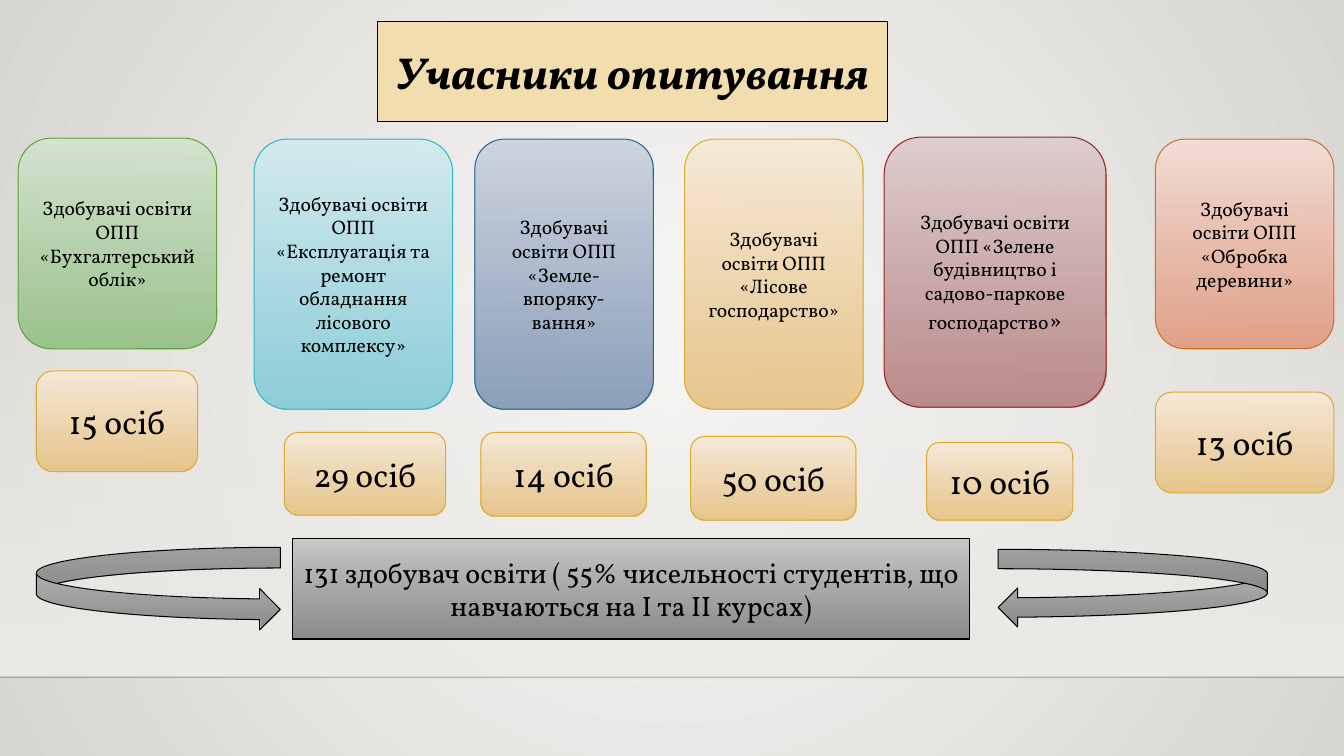
"""Build the slide that shows how many students of each programme took the survey."""
from dataclasses import dataclass
from typing import Any, NamedTuple

from lxml import etree
from pptx import Presentation
from pptx.dml.color import RGBColor
from pptx.enum.shapes import MSO_CONNECTOR, MSO_SHAPE
from pptx.enum.text import MSO_ANCHOR, PP_ALIGN
from pptx.oxml.ns import qn
from pptx.util import Emu, Pt

RECT = MSO_SHAPE.RECTANGLE
ROUNDED = MSO_SHAPE.ROUNDED_RECTANGLE
LEFT_ARROW = MSO_SHAPE.CURVED_LEFT_ARROW
RIGHT_ARROW = MSO_SHAPE.CURVED_RIGHT_ARROW
STRAIGHT = MSO_CONNECTOR.STRAIGHT
MIDDLE = MSO_ANCHOR.MIDDLE
CENTER = PP_ALIGN.CENTER

EMU_PER_PX = 9144
SLIDE_W, SLIDE_H = 1333, 750
FLOOR_Y = 672
FONT = "Vollkorn"
BLACK = "000000"


class Box(NamedTuple):
    """Place and size in px."""
    x: int
    y: int
    w: int
    h: int


class Stop(NamedTuple):
    """Gradient stop colour with its opacity in percent."""
    color: str
    opacity: int = 100


class Run(NamedTuple):
    """Piece of text in one size."""
    text: str
    size: int


class Style(NamedTuple):
    """Gradient from top to bottom and outline colour."""
    top: str
    bottom: str
    line: str


@dataclass(frozen=True)
class Programme:
    """Study programme card with its headcount badge."""
    box: Box
    style: Style
    lines: list[list[Run]]
    badge: Box
    people: int


GREEN = Style("D5E4D1", "96C087", "5FA534")
TEAL = Style("D5EBEF", "85CCD8", "2FB6C6")
BLUE = Style("CED5DF", "849AB7", "236797")
GOLD = Style("F6EAD9", "E8C385", "DCAB34")
RED = Style("DFCECE", "B78484", "972323")
ORANGE = Style("F3DDD6", "E19C82", "D26D23")
GRAY = Style("C8C8C8", "848484", BLACK)


def card_lines(*texts: str) -> list[list[Run]]:
    """Return one card paragraph for each text."""
    return [[Run(text, 14)] for text in texts]


PROGRAMMES = [
    Programme(Box(18, 137, 197, 209), GREEN,
              card_lines("Здобувачі освіти", "ОПП «Бухгалтерський облік»"),
              Box(36, 368, 160, 100), 15),
    Programme(Box(252, 138, 197, 268), TEAL,
              card_lines("Здобувачі освіти",
                         "ОПП «Експлуатація та ремонт обладнання лісового комплексу»"),
              Box(282, 429, 160, 82), 29),
    Programme(Box(471, 138, 177, 268), BLUE,
              card_lines("Здобувачі освіти ОПП «Земле-", "впоряку-вання»"),
              Box(477, 429, 164, 83), 14),
    Programme(Box(679, 138, 177, 268), GOLD,
              card_lines("Здобувачі освіти ОПП", "«Лісове", "господарство»"),
              Box(685, 433, 164, 83), 50),
    Programme(Box(877, 136, 220, 268), RED,
              card_lines("Здобувачі освіти ОПП «Зелене будівництво і садово-паркове")
              + [[Run("господарство", 14), Run("»", 18)]],
              Box(919, 439, 145, 77), 10),
    Programme(Box(1146, 138, 177, 208), ORANGE,
              card_lines("Здобувачі освіти ОПП «Обробка деревини»"),
              Box(1146, 389, 177, 100), 13),
]


def px(n: int) -> Emu:
    """Turn px into EMU."""
    return Emu(n * EMU_PER_PX)


def rgb(color: str) -> RGBColor:
    """Turn a hex string into a colour."""
    return RGBColor.from_string(color)


def add_alpha(color: Any, percent: int) -> None:
    """Set the opacity of a colour element."""
    etree.SubElement(color, qn("a:alpha"), val=str(percent * 1000))


def set_gradient(fill: Any, root: Any, stops: list[Stop], radial: bool = False) -> None:
    """Give a fill under root evenly spaced stops, downward or from the centre."""
    fill.gradient()
    grad = next(root.iter(qn("a:gradFill")))
    for child in list(grad):
        grad.remove(child)
    gs_list = etree.SubElement(grad, qn("a:gsLst"))
    for i, stop in enumerate(stops):
        gs = etree.SubElement(gs_list, qn("a:gs"), pos=str(i * 100000 // (len(stops) - 1)))
        color = etree.SubElement(gs, qn("a:srgbClr"), val=stop.color)
        if stop.opacity < 100:
            add_alpha(color, stop.opacity)
    if radial:
        path = etree.SubElement(grad, qn("a:path"), {"path": "circle"})
        etree.SubElement(path, qn("a:fillToRect"), {side: "50000" for side in "ltrb"})
    else:
        etree.SubElement(grad, qn("a:lin"), ang="5400000", scaled="0")


def add_shape(slide: Any, kind: Any, box: Box, line: str | None = None) -> Any:
    """Add a preset shape without shadow, outlined if a colour is given."""
    sp = slide.shapes.add_shape(kind, *map(px, box))
    sp.shadow.inherit = False
    if line:
        sp.line.color.rgb = rgb(line)
        sp.line.width = Pt(0.75)
    else:
        sp.line.fill.background()
    return sp


def add_styled(slide: Any, kind: Any, box: Box, style: Style) -> Any:
    """Add an outlined shape with a gradient from top to bottom."""
    sp = add_shape(slide, kind, box, style.line)
    set_gradient(sp.fill, sp._element, [Stop(style.top), Stop(style.bottom, 92)])
    return sp


def add_text(sp: Any, lines: list[list[Run]], strong: bool = False) -> None:
    """Write centred black paragraphs into a shape."""
    tf = sp.text_frame
    tf.word_wrap = True
    tf.vertical_anchor = MIDDLE
    for i, line in enumerate(lines):
        p = tf.add_paragraph() if i else tf.paragraphs[0]
        p.alignment = CENTER
        for run in line:
            r = p.add_run()
            r.text = run.text
            r.font.name = FONT
            r.font.size = Pt(run.size)
            r.font.bold = r.font.italic = strong
            r.font.color.rgb = rgb(BLACK)


def add_backdrop(slide: Any) -> None:
    """Draw the background, the fading wall and the floor line."""
    set_gradient(slide.background.fill, slide._element,
                 [Stop("FAFAF9"), Stop("D7D5D2")], radial=True)
    wall = add_shape(slide, RECT, Box(0, 220, SLIDE_W, FLOOR_Y - 222))
    set_gradient(wall.fill, wall._element, [Stop("EDEBE7", 0), Stop("EDEBE7")])
    floor = slide.shapes.add_connector(STRAIGHT, px(0), px(FLOOR_Y), px(SLIDE_W), px(FLOOR_Y))
    floor.line.color.rgb = rgb("000001")
    floor.line.width = Pt(1)
    add_alpha(next(floor._element.iter(qn("a:srgbClr"))), 20)
    etree.SubElement(floor._element.spPr, qn("a:effectLst"))


def main() -> None:
    """Build and save the slide."""
    prs = Presentation()
    prs.slide_width, prs.slide_height = px(SLIDE_W), px(SLIDE_H)
    s = prs.slides.add_slide(prs.slide_layouts[6])
    add_backdrop(s)

    title = add_shape(s, RECT, Box(374, 21, 506, 100), BLACK)
    title.fill.solid()
    title.fill.fore_color.rgb = rgb("F1DDAE")
    add_text(title, [[Run("Учасники опитування", 32)]], strong=True)

    for prog in PROGRAMMES:
        add_text(add_styled(s, ROUNDED, prog.box, prog.style), prog.lines)
        add_text(add_styled(s, ROUNDED, prog.badge, GOLD), [[Run(f"{prog.people} осіб", 24)]])

    total = sum(prog.people for prog in PROGRAMMES)
    summary = (f"{total} здобувач освіти ( 55% чисельності студентів, "
               "що навчаються на І та ІІ курсах)")
    add_text(add_styled(s, RECT, Box(290, 534, 672, 100), GRAY), [[Run(summary, 20)]])
    add_styled(s, LEFT_ARROW, Box(990, 545, 267, 77), GRAY)
    add_styled(s, RIGHT_ARROW, Box(36, 543, 242, 82), GRAY)
    prs.save("out.pptx")


if __name__ == "__main__":
    main()
